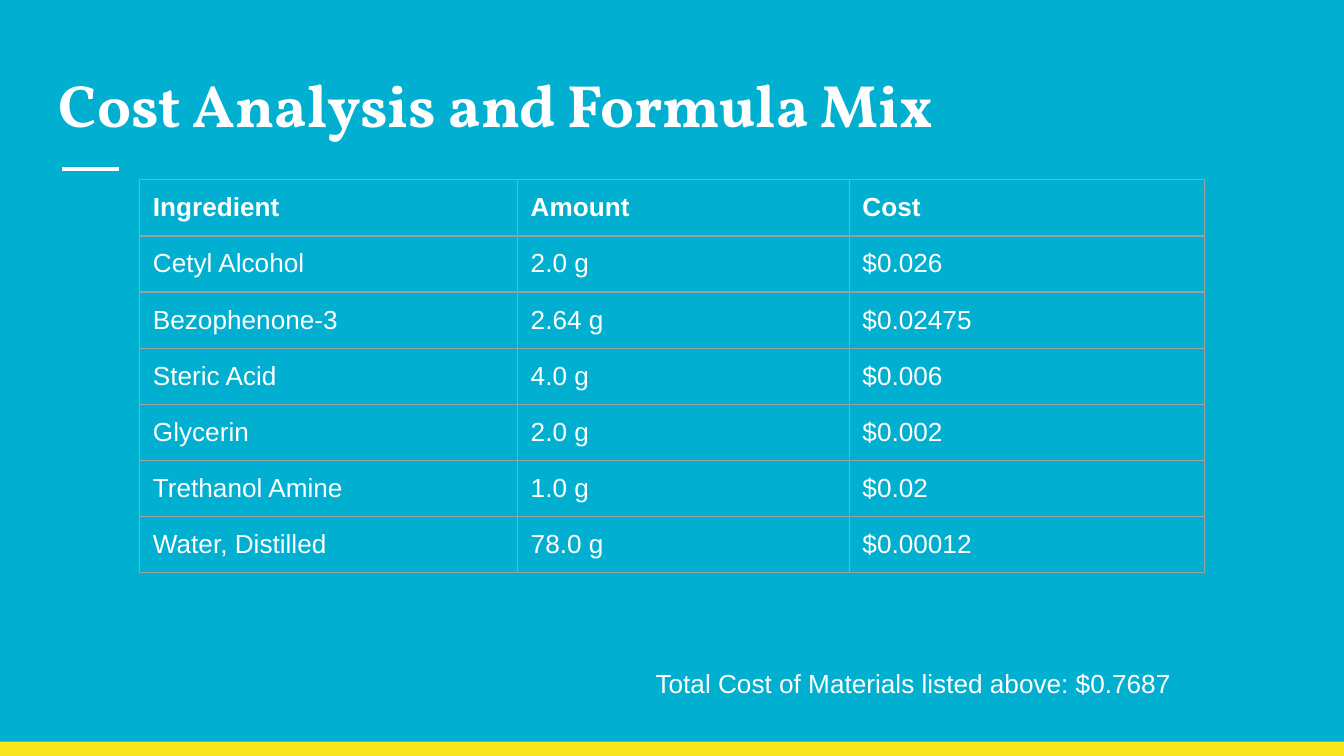
from lxml import etree
from pptx import Presentation
from pptx.dml.color import RGBColor
from pptx.enum.shapes import MSO_CONNECTOR, MSO_SHAPE
from pptx.enum.text import MSO_ANCHOR, MSO_AUTO_SIZE, PP_ALIGN
from pptx.oxml.ns import qn
from pptx.util import Cm, Pt

RECTANGLE = MSO_SHAPE.RECTANGLE
STRAIGHT = MSO_CONNECTOR.STRAIGHT
TOP = MSO_ANCHOR.TOP
LEFT = PP_ALIGN.LEFT
NO_AUTOFIT = MSO_AUTO_SIZE.NONE

BLUE = RGBColor(0x01, 0xAF, 0xD1)
YELLOW = RGBColor(0xF8, 0xE7, 0x1C)
WHITE = RGBColor(0xFF, 0xFF, 0xFF)
GREY = RGBColor(0x9E, 0x9E, 0x9E)

TITLE_FONT = "Vollkorn"
BODY_FONT = "Arial"
INSET = Cm(0.25)

COLUMN_WIDTHS = [7.14, 6.27, 6.71]
ROW_HEIGHT = 1.06
COSTS = [
    ["Ingredient", "Amount", "Cost"],
    ["Cetyl Alcohol", "2.0 g", "$0.026"],
    ["Bezophenone-3", "2.64 g", "$0.02475"],
    ["Steric Acid", "4.0 g", "$0.006"],
    ["Glycerin", "2.0 g", "$0.002"],
    ["Trethanol Amine", "1.0 g", "$0.02"],
    ["Water, Distilled", "78.0 g", "$0.00012"],
]


def set_insets(target):
    target.margin_left = target.margin_right = INSET
    target.margin_top = target.margin_bottom = INSET
    target.vertical_anchor = TOP


def add_run(tf, text, font=BODY_FONT, size=14, bold=False):
    p = tf.paragraphs[0]
    p.alignment = LEFT
    r = p.add_run()
    r.text = text
    r.font.name = font
    r.font.size = Pt(size)
    r.font.bold = bold
    r.font.color.rgb = WHITE


def format_frame(tf):
    tf.word_wrap = True
    tf.auto_size = NO_AUTOFIT
    set_insets(tf)


def add_title(s, text):
    sp = s.shapes.title
    sp.left, sp.top, sp.width, sp.height = Cm(0.86), Cm(1.04), Cm(23.67), Cm(1.8)
    format_frame(sp.text_frame)
    add_run(sp.text_frame, text, TITLE_FONT, 32, True)


def add_bar(s, top, width, height):
    sp = s.shapes.add_shape(RECTANGLE, 0, top, width, height)
    sp.shadow.inherit = False
    sp.fill.solid()
    sp.fill.fore_color.rgb = YELLOW
    sp.line.fill.background()


def add_rule(s, left, right, y):
    line = s.shapes.add_connector(STRAIGHT, left, y, right, y)
    line.line.color.rgb = WHITE
    line.line.width = Pt(2.25)
    etree.SubElement(line._element.spPr, qn("a:effectLst"))


def add_borders(cell):
    tc_pr = cell._tc.get_or_add_tcPr()
    for side in ("a:lnL", "a:lnR", "a:lnT", "a:lnB"):
        ln = etree.SubElement(tc_pr, qn(side), w=str(Pt(0.75)))
        fill = etree.SubElement(ln, qn("a:solidFill"))
        etree.SubElement(fill, qn("a:srgbClr"), val=str(GREY))


def add_cost_table(s, left, top):
    width, height = Cm(sum(COLUMN_WIDTHS)), Cm(ROW_HEIGHT * len(COSTS))
    frame = s.shapes.add_table(len(COSTS), len(COLUMN_WIDTHS), left, top, width, height)
    table = frame.table
    table.horz_banding = False
    for column, column_width in zip(table.columns, COLUMN_WIDTHS):
        column.width = Cm(column_width)
    for i, values in enumerate(COSTS):
        table.rows[i].height = Cm(ROW_HEIGHT)
        for j, value in enumerate(values):
            cell = table.cell(i, j)
            set_insets(cell)
            add_borders(cell)
            cell.fill.background()
            add_run(cell.text_frame, value, bold=i == 0)


def add_note(s, text):
    sp = s.shapes.add_textbox(Cm(12.14), Cm(12.37), Cm(12.4), Cm(0.79))
    format_frame(sp.text_frame)
    add_run(sp.text_frame, text)


def main():
    prs = Presentation()
    prs.slide_width, prs.slide_height = Cm(25.4), Cm(14.29)
    s = prs.slides.add_slide(prs.slide_layouts[5])
    s.background.fill.solid()
    s.background.fill.fore_color.rgb = BLUE
    bar_height = Cm(0.27)
    add_bar(s, prs.slide_height - bar_height, prs.slide_width, bar_height)
    add_rule(s, Cm(1.17), Cm(2.24), Cm(3.2))
    add_title(s, "Cost Analysis and Formula Mix")
    add_cost_table(s, Cm(2.64), Cm(3.4))
    add_note(s, "Total Cost of Materials listed above: $0.7687")
    prs.save("out.pptx")


if __name__ == "__main__":
    main()
